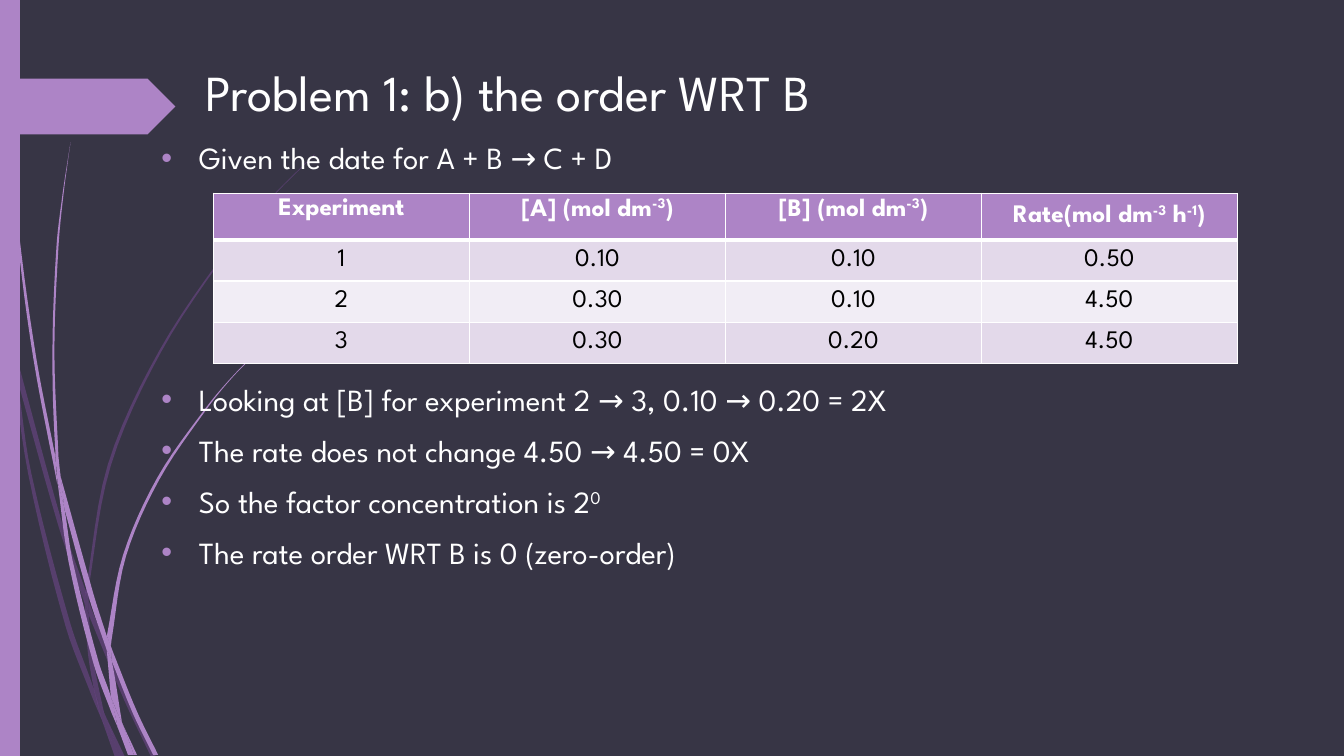
import math
from dataclasses import dataclass

import lxml.etree
import pptx
import pptx.dml.color
import pptx.enum.shapes
import pptx.enum.text
import pptx.oxml
import pptx.oxml.ns
import pptx.util

Cm = pptx.util.Cm
Anchor = pptx.enum.text.MSO_ANCHOR
Align = pptx.enum.text.PP_ALIGN
Preset = pptx.enum.shapes.MSO_SHAPE
qn = pptx.oxml.ns.qn


@dataclass(frozen=True)
class Theme:
    font: str = "League Spartan"
    background: str = "373545"
    accent: str = "AD84C6"
    deep: str = "874EA9"
    light: str = "FFFFFF"
    dark: str = "000000"
    bands: tuple = ("E3D9EA", "F1EDF5")
    title: int = 36
    body: int = 22
    cell: int = 18


THEME = Theme()
GRID = 2.54  # cm per unit of the wisp coordinates

# Each strand is a pair of edges: one running down, one running back up.
FAINT_WISP = [
    ([(0, 2.82), (.09, 3.22), (.11, 3.5)], [(.1, 3.44), (0, 2.99)]),
    ([(.14, 3.45), (.62, 5.2), (.85, 5.86)], [(.84, 5.99), (.58, 5.22), (.17, 3.76)]),
    ([(.88, 5.96), (.92, 6.07), (1.27, 6.92), (1.55, 7.51)],
     [(1.5, 7.51), (1.23, 6.94), (.88, 6.1)]),
    ([(1.05, 7.11), (1.24, 7.51)], [(1.19, 7.51)]),
    ([(.11, 3.5), (.17, 3.76), (.31, 4.69), (.7, 6.19), (.93, 6.83), (1.01, 7.14)],
     [(.92, 6.93), (.65, 6.21), (.28, 4.7), (.11, 3.5)]),
    ([(.84, 5.99), (.88, 6.1), (.91, 6.46), (1.03, 7.06), (1.05, 7.11)],
     [(.96, 6.92), (.93, 6.83), (.87, 6.46), (.84, 5.99)]),
    ([(3.12, 1.53), (2.68, 1.97), (2.28, 2.44), (1.58, 3.48), (1.07, 4.61), (.85, 5.86)],
     [(.88, 5.96), (.88, 5.84), (1.1, 4.62), (1.6, 3.49), (2.29, 2.45), (2.68, 1.98),
      (3.12, 1.54)]),
    ([(1.01, 7.14), (1.19, 7.51)], [(1.14, 7.51)]),
    ([(.84, 5.99), (.85, 5.86), (.88, 5.96)], [(.88, 6.1), (.88, 6.08)]),
    ([(.93, 6.83), (.96, 6.92), (1.05, 7.11), (1.19, 7.51)], [(1.01, 7.14), (.99, 7.07)]),
]
BRIGHT_WISP = [
    ([(.03, 0), (.04, .48), (.07, 1.1), (.17, 2.33), (.33, 3.55), (.57, 4.81)],
     [(.55, 4.53), (.36, 3.55), (.19, 2.32), (.08, 1.09), (.05, .48), (.04, 0)]),
    ([(.6, 4.72), (.93, 5.9), (1.06, 6.31)], [(1.06, 6.45), (.88, 5.92), (.64, 5.05)]),
    ([(1.1, 6.41), (1.13, 6.49), (1.36, 7.06), (1.57, 7.49)],
     [(1.52, 7.49), (1.32, 7.08), (1.11, 6.56)]),
    ([(.57, 4.77), (.64, 5.05), (.72, 5.56), (.98, 6.57), (1.1, 6.91), (1.17, 7.22)],
     [(1.11, 7.08), (.93, 6.59), (.68, 5.57), (.57, 4.77)]),
    ([(.7, 1.41), (.62, 1.93), (.56, 2.45), (.52, 3.49), (.55, 4.49), (.6, 4.72)],
     [(.58, 4.53), (.54, 3.49), (.58, 2.45), (.63, 1.93), (.7, 1.41)]),
    ([(1.22, 7.19), (1.36, 7.49)], [(1.33, 7.49)]),
    ([(.55, 4.49), (.6, 4.72), (.64, 5.05)], [(.57, 4.77), (.55, 4.53)]),
    ([(2.6, 3.44), (2.31, 3.73), (2.04, 4.05), (1.56, 4.74), (1.22, 5.51), (1.06, 6.31)],
     [(1.1, 6.41), (1.11, 6.33), (1.25, 5.52), (1.58, 4.76), (2.05, 4.06), (2.31, 3.74),
      (2.61, 3.44)]),
    ([(1.17, 7.22), (1.31, 7.49)], [(1.27, 7.49)]),
    ([(1.06, 6.45), (1.11, 6.56), (1.21, 7.16), (1.22, 7.19)], [(1.16, 7.06), (1.1, 6.91)]),
    ([(1.06, 6.31), (1.1, 6.41), (1.11, 6.56)], [(1.09, 6.51), (1.06, 6.45)]),
    ([(1.1, 6.91), (1.16, 7.06), (1.22, 7.19), (1.33, 7.49)],
     [(1.3, 7.49), (1.17, 7.22), (1.16, 7.17)]),
]

# A caret opens and closes a superscript.
BULLETS = ["Given the date for A + B → C + D",
           "Looking at [B] for experiment 2 → 3, 0.10 → 0.20 = 2X",
           "The rate does not change 4.50 → 4.50 = 0X",
           "So the factor concentration is 2^0^",
           "The rate order WRT B is 0 (zero-order)"]
RATES = [["Experiment", "[A] (mol dm^-3^)", "[B] (mol dm^-3^)", "Rate(mol dm^-3^ h^-1^)"],
         ["1", "0.10", "0.10", "0.50"],
         ["2", "0.30", "0.10", "4.50"],
         ["3", "0.30", "0.20", "4.50"]]


def rgb(code):
    return pptx.dml.color.RGBColor.from_string(code)


def paint(shape, color, opacity=100):
    shape.shadow.inherit = False
    shape.line.fill.background()
    shape.fill.solid()
    shape.fill.fore_color.rgb = rgb(color)
    if opacity < 100:
        tint = shape.fill._xPr.find(".//" + qn("a:srgbClr"))
        lxml.etree.SubElement(tint, qn("a:alpha")).set("val", str(opacity * 1000))


def write(paragraph, text, *, size, color=THEME.light, bold=False, align=Align.LEFT, before=0):
    paragraph.alignment = align
    paragraph.space_before = pptx.util.Pt(before)
    for index, part in enumerate(text.split("^")):
        if not part:
            continue
        run = paragraph.add_run()
        run.text = part
        run.font.name, run.font.size, run.font.bold = THEME.font, pptx.util.Pt(size), bold
        run.font.color.rgb = rgb(color)
        if index % 2:
            run._r.get_or_add_rPr().set("baseline", "30000")


def smooth(edge, steps=6):
    """Points of a curve through the edge, with tangents scaled to chord length."""
    last = len(edge) - 1
    slopes = []
    for i in range(last + 1):
        a, b, c = edge[max(i - 1, 0)], edge[i], edge[min(i + 1, last)]
        span = math.dist(a, b) + math.dist(b, c) or 1
        slopes.append([(c[k] - a[k]) / span for k in (0, 1)])
    curve = [edge[0]]
    for i in range(last):
        p, q, chord = edge[i], edge[i + 1], math.dist(edge[i], edge[i + 1])
        for step in range(1, steps + 1):
            t = step / steps
            curve.append([(2 * t**3 - 3 * t**2 + 1) * p[k] + (3 * t**2 - 2 * t**3) * q[k]
                          + chord * ((t**3 - 2 * t**2 + t) * slopes[i][k]
                                     + (t**3 - t**2) * slopes[i + 1][k]) for k in (0, 1)])
    return curve


def add_wisp(slide, strands, color, opacity=100):
    pieces = []
    for down, up in strands:
        outline = [(Cm(x * GRID), Cm(y * GRID)) for x, y in smooth(down) + smooth(up)]
        builder = slide.shapes.build_freeform(*outline[0])
        builder.add_line_segments(outline[1:], close=True)
        pieces.append(builder.convert_to_shape())
        paint(pieces[-1], color, opacity)
    slide.shapes.add_group_shape(pieces)


def place(slide, holder, left, top, width, height):
    """Move a placeholder and bring it in front of the decoration."""
    holder.left, holder.top, holder.width, holder.height = map(Cm, (left, top, width, height))
    slide.shapes._spTree.append(holder._element)
    frame = holder.text_frame
    frame.auto_size = pptx.enum.text.MSO_AUTO_SIZE.NONE
    frame.vertical_anchor = Anchor.TOP
    frame.word_wrap = True
    return frame


def add_bullet(paragraph):
    props = paragraph._p.get_or_add_pPr()
    props.set("marL", str(Cm(0.95)))
    props.set("indent", str(Cm(-0.95)))
    tint = lxml.etree.SubElement(props, qn("a:buClr"))
    lxml.etree.SubElement(tint, qn("a:srgbClr")).set("val", THEME.accent)
    lxml.etree.SubElement(props, qn("a:buFont")).set("typeface", "Arial")
    lxml.etree.SubElement(props, qn("a:buChar")).set("char", "•")


def set_borders(cell, **points):
    props = cell._tc.get_or_add_tcPr()
    for index, side in enumerate("LRTB"):
        line = pptx.oxml.parse_xml(
            f'<a:ln{side} {pptx.oxml.ns.nsdecls("a")} w="{pptx.util.Pt(points.get(side, 1))}">'
            f'<a:solidFill><a:srgbClr val="{THEME.light}"/></a:solidFill></a:ln{side}>')
        props.insert(index, line)


def add_rates(slide):
    table = slide.shapes.add_table(len(RATES), len(RATES[0]), Cm(5.38), Cm(4.87),
                                   Cm(25.8), Cm(4.29)).table
    table.horz_banding = False
    for r, values in enumerate(RATES):
        header = r == 0
        table.rows[r].height = Cm(1.17 if header else 1.04)
        for c, value in enumerate(values):
            cell = table.cell(r, c)
            top_set = header and c < len(values) - 1
            cell.vertical_anchor = Anchor.TOP if top_set else Anchor.MIDDLE
            cell.fill.solid()
            cell.fill.fore_color.rgb = rgb(THEME.accent if header else THEME.bands[(r - 1) % 2])
            set_borders(cell, T=3 if r == 1 else 1, B=3 if header else 1)
            write(cell.text_frame.paragraphs[0], value, size=THEME.cell, bold=header,
                  color=THEME.light if header else THEME.dark, align=Align.CENTER)


def main():
    deck = pptx.Presentation()
    deck.slide_width, deck.slide_height = Cm(33.87), Cm(19.05)
    slide = deck.slides.add_slide(deck.slide_layouts[1])
    slide.background.fill.solid()
    slide.background.fill.fore_color.rgb = rgb(THEME.background)

    add_wisp(slide, FAINT_WISP, THEME.deep, opacity=40)
    add_wisp(slide, BRIGHT_WISP, THEME.accent)
    paint(slide.shapes.add_shape(Preset.RECTANGLE, 0, 0, Cm(0.5), Cm(19.05)), THEME.accent)
    marker = slide.shapes.add_shape(Preset.PENTAGON, 0, Cm(1.98), Cm(4.42), Cm(1.41))
    paint(marker, THEME.accent)

    heading = place(slide, slide.shapes.title, 4.93, 1.42, 28.6, 3.12)
    write(heading.paragraphs[0], "Problem 1: b) the order WRT B", size=THEME.title)
    body = place(slide, slide.placeholders[1], 3.81, 3.38, 28.58, 15.39)
    for index, text in enumerate(BULLETS):
        paragraph = body.add_paragraph() if index else body.paragraphs[0]
        # The second bullet leaves room for the table.
        write(paragraph, text, size=THEME.body, before=146 if index == 1 else 10)
        add_bullet(paragraph)
    add_rates(slide)
    deck.save("out.pptx")


if __name__ == "__main__":
    main()
